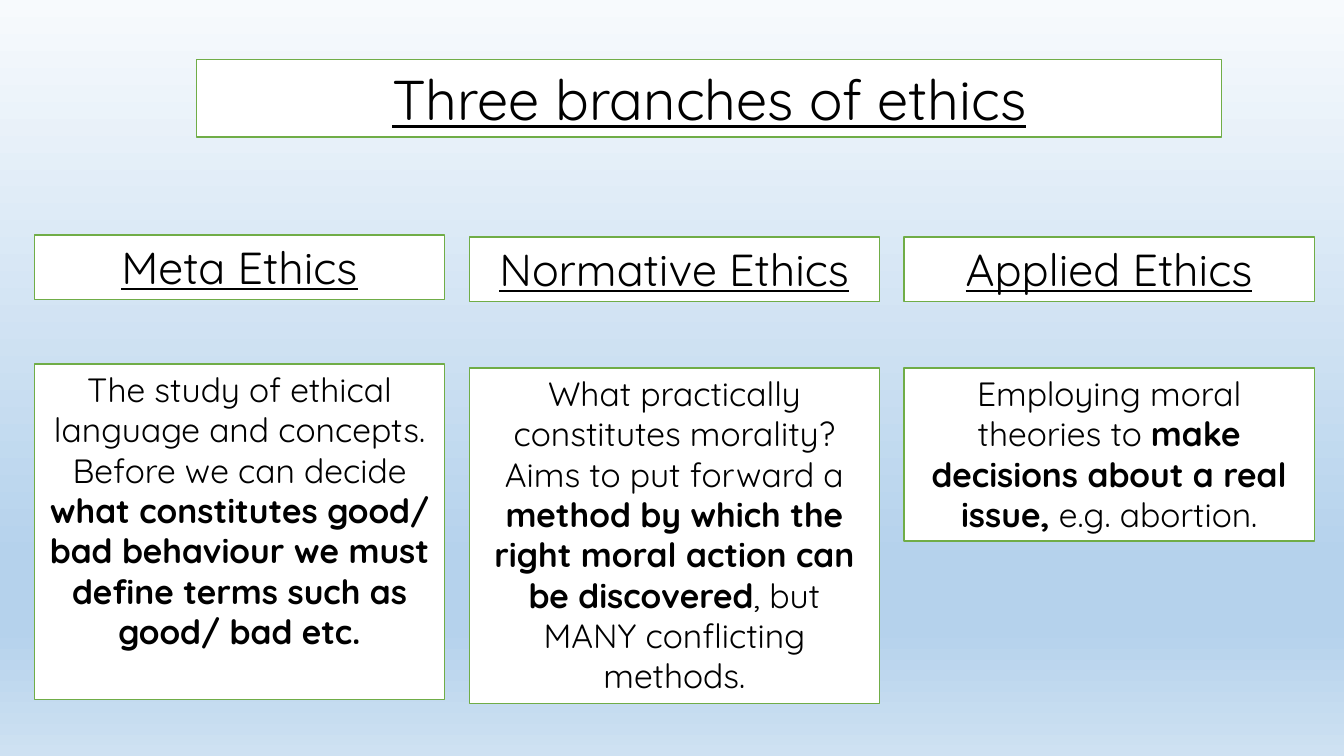
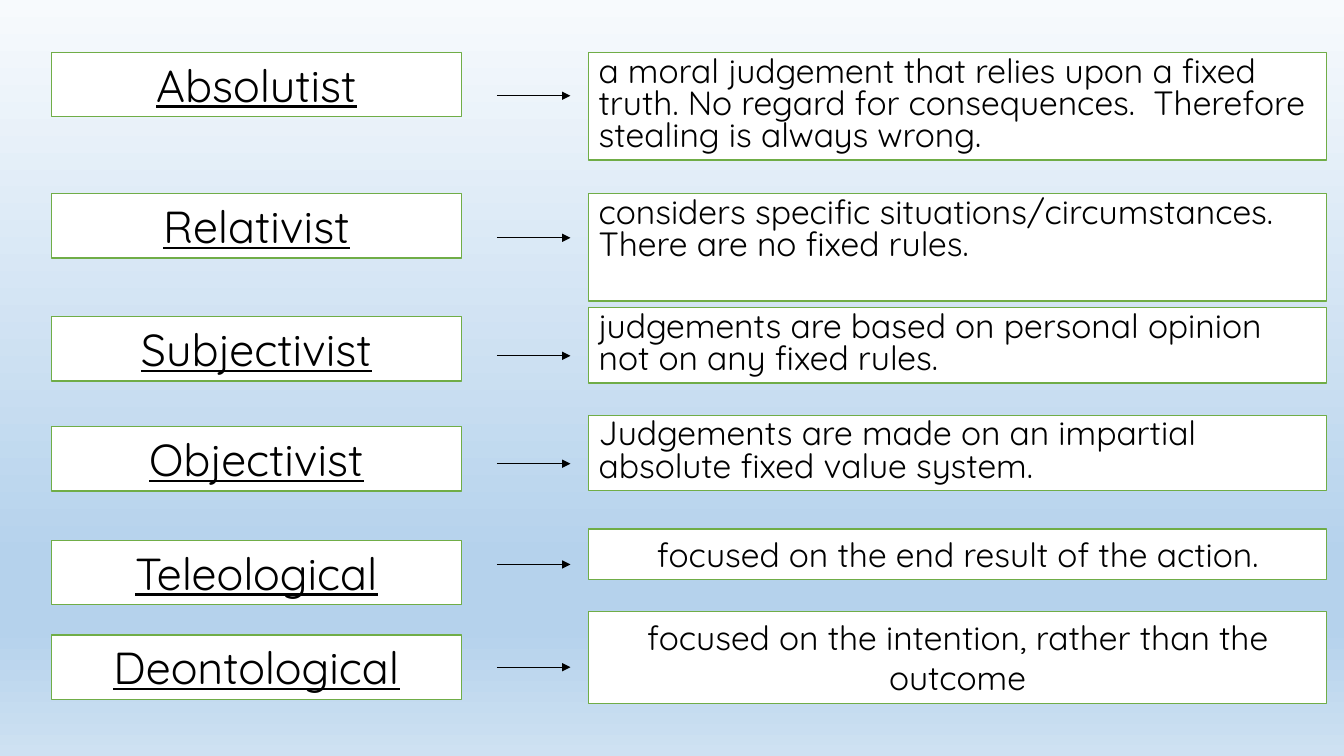
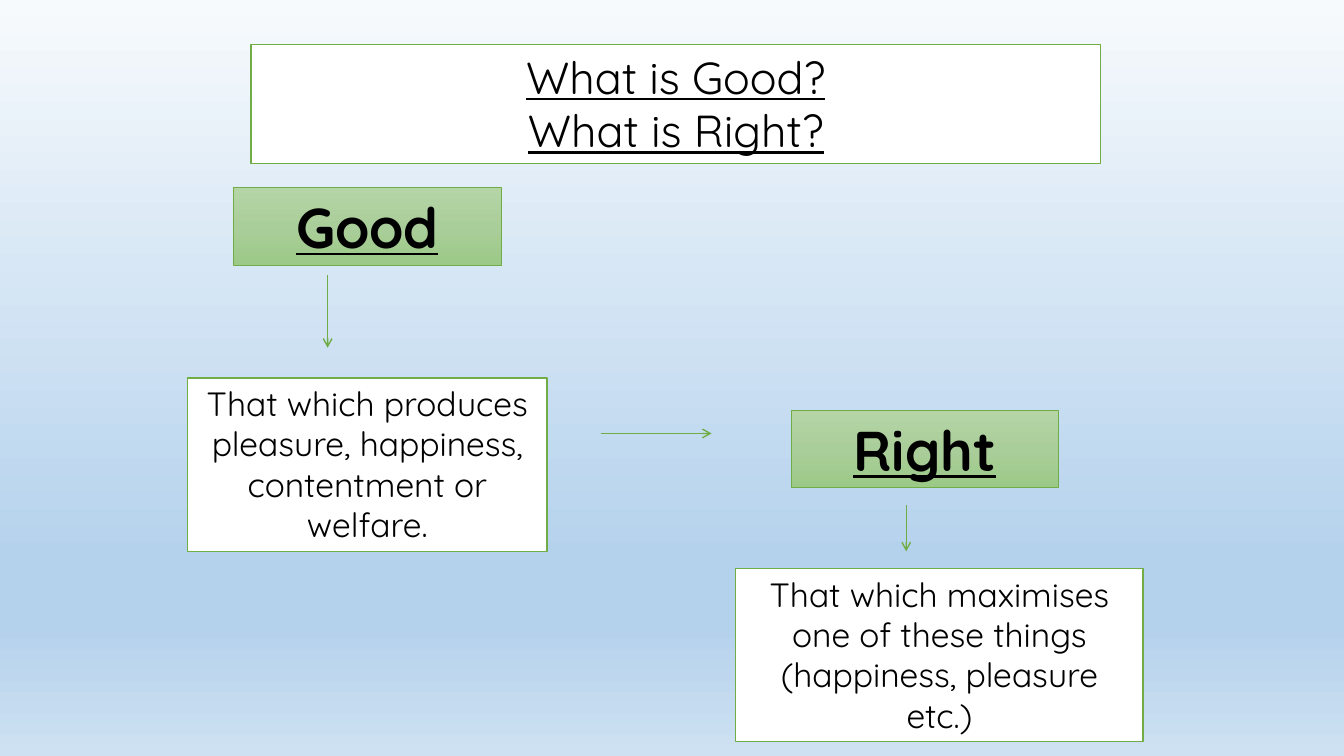
from lxml.etree import SubElement
from pptx import Presentation
from pptx.dml.color import RGBColor
from pptx.enum.shapes import MSO_CONNECTOR, MSO_SHAPE
from pptx.enum.text import MSO_ANCHOR, MSO_AUTO_SIZE, PP_ALIGN
from pptx.oxml.ns import qn
from pptx.util import Pt

FONT = "Quicksand"
COLORS = {"text": "000000", "box": "FFFFFF", "green": "70AD47"}
SKY = [(0, "F7FAFD"), (74, "B5D2EC"), (83, "B5D2EC"), (100, "CEE1F2")]
LEAF = [(0, "B5D5A7"), (50, "AACE9A"), (100, "9CC987")]

HEADING = {"size": 32, "underline": True}
BIG_HEADING = {"size": 40, "underline": True}

BRANCHES = [
    ("Meta Ethics", 167.8, 260, 239.8, [
        ("The study of ethical language and concepts. Before we can decide ", False),
        ("what constitutes good/ bad behaviour we must define terms such as good/ bad etc.", True),
    ]),
    ("Normative Ethics", 169.2, 262.8, 239.8, [
        ("What practically constitutes morality? Aims to put forward a ", False),
        ("method by which the right moral action can be discovered", True),
        (", but MANY conflicting methods.", False),
    ]),
    ("Applied Ethics", 169.2, 262.8, 123.8, [
        ("Employing moral theories to ", False),
        ("make decisions about a real issue,", True),
        (" e.g. abortion.", False),
    ]),
]

LEFT_TIGHT = {"align": PP_ALIGN.LEFT, "spacing": 0.8}
CENTERED = {}
TERMS = [
    ("Absolutist", 37.4, 68.4, 37.4, 77, LEFT_TIGHT,
     "a moral judgement that relies upon a fixed truth. No regard for consequences.  Therefore stealing is always wrong."),
    ("Relativist", 138.2, 169.9, 138.2, 77, LEFT_TIGHT,
     "considers specific situations/circumstances. There are no fixed rules."),
    ("Subjectivist", 226.1, 254.2, 219.6, 54, LEFT_TIGHT,
     "judgements are based on personal opinion not on any fixed rules."),
    ("Objectivist", 304.6, 331.2, 296.6, 54, LEFT_TIGHT,
     "Judgements are made on an impartial absolute fixed value system."),
    ("Teleological", 385.9, 403.2, 378, 36, CENTERED,
     "focused on the end result of the action."),
    ("Deontological", 453.6, 476.6, 437, 65.5, CENTERED,
     "focused on the intention, rather than the outcome"),
]

LABELS = [("Good", 167, 133.9), ("Right", 565.2, 293)]
MEANINGS = [
    ("That which produces pleasure, happiness, contentment or welfare.", (133.9, 270, 257, 123.8)),
    ("That which maximises one of these things (happiness, pleasure etc.)", (525.6, 406.1, 290.9, 123.8)),
]
FLOW = [(234, 196.6, 234, 248.4), (429.1, 309.6, 508.3, 309.6), (647.3, 360.7, 647.3, 393.8)]

COLUMN_LEFT, COLUMN_STEP, COLUMN_WIDTH, HEADING_HEIGHT = 24.6, 310.6, 293, 46


def color(name):
    return RGBColor.from_string(COLORS[name])


def fill_gradient(fill, element, stops):
    fill.gradient()
    fill.gradient_angle = 270
    stop_list = next(element.iter(qn("a:gsLst")))
    for stop in list(stop_list):
        stop_list.remove(stop)
    for position, value in stops:
        stop = SubElement(stop_list, qn("a:gs"), pos=str(position * 1000))
        SubElement(stop, qn("a:srgbClr"), val=value)


def write_text(shape, paragraphs, size=24, bold=False, underline=False,
               align=PP_ALIGN.CENTER, spacing=1.0):
    frame = shape.text_frame
    frame.word_wrap = True
    frame.auto_size = MSO_AUTO_SIZE.NONE
    frame.vertical_anchor = MSO_ANCHOR.TOP
    for index, runs in enumerate(paragraphs):
        paragraph = frame.add_paragraph() if index else frame.paragraphs[0]
        paragraph.alignment = align
        paragraph.line_spacing = spacing
        for text, strong in runs:
            run = paragraph.add_run()
            run.text = text
            run.font.name = FONT
            run.font.size = Pt(size)
            run.font.bold = bold or strong
            run.font.underline = underline
            run.font.color.rgb = color("text")


def style_box(shape, line_width=1, gradient=None):
    if gradient:
        fill_gradient(shape.fill, shape.element, gradient)
    else:
        shape.fill.solid()
        shape.fill.fore_color.rgb = color("box")
    shape.line.color.rgb = color("green")
    shape.line.width = Pt(line_width)


def add_box(slide, place, runs, line_width=1, gradient=None, **text_format):
    shape = slide.shapes.add_shape(MSO_SHAPE.RECTANGLE, *map(Pt, place))
    shape.shadow.inherit = False
    style_box(shape, line_width, gradient)
    write_text(shape, [runs], **text_format)


def set_title(slide, place, lines, **text_format):
    title = slide.shapes.title
    title.left, title.top, title.width, title.height = map(Pt, place)
    style_box(title)
    write_text(title, [[(line, False)] for line in lines], **text_format)


def add_arrow(slide, points, line_color, width, head):
    arrow = slide.shapes.add_connector(MSO_CONNECTOR.STRAIGHT, *map(Pt, points))
    arrow.line.color.rgb = color(line_color)
    arrow.line.width = Pt(width)
    SubElement(arrow.line._get_or_add_ln(), qn("a:tailEnd"), type=head)
    SubElement(arrow.element.spPr, qn("a:effectLst"))


def build_branches(slide):
    set_title(slide, (140.4, 42.5, 732.2, 55.4), ["Three branches of ethics"], **BIG_HEADING)
    for index, (name, name_top, body_top, body_height, runs) in enumerate(BRANCHES):
        left = COLUMN_LEFT + index * COLUMN_STEP
        add_box(slide, (left, name_top, COLUMN_WIDTH, HEADING_HEIGHT), [(name, False)], **HEADING)
        add_box(slide, (left, body_top, COLUMN_WIDTH, body_height), runs)


def build_terms(slide):
    for term, term_top, arrow_y, top, height, text_format, definition in TERMS:
        add_box(slide, (36.7, term_top, COLUMN_WIDTH, HEADING_HEIGHT), [(term, False)], **HEADING)
        add_box(slide, (420.5, top, 527, height), [(definition, False)], **text_format)
        add_arrow(slide, (355, arrow_y, 407.5, arrow_y), "text", 0.5, "triangle")


def build_good_and_right(slide):
    set_title(slide, (179.3, 31.7, 607, 85), ["What is Good?", "What is Right?"], **HEADING)
    for label, left, top in LABELS:
        add_box(slide, (left, top, 190.8, 55.4), [(label, True)], line_width=0.5,
                gradient=LEAF, **BIG_HEADING)
    for meaning, place in MEANINGS:
        add_box(slide, place, [(meaning, False)])
    for points in FLOW:
        add_arrow(slide, points, "green", 1, "arrow")


def main():
    presentation = Presentation()
    presentation.slide_width, presentation.slide_height = Pt(960), Pt(540)
    master = presentation.slide_master
    fill_gradient(master.background.fill, master.element, SKY)
    title_only, blank = presentation.slide_layouts[5], presentation.slide_layouts[6]
    for layout, build in [(title_only, build_branches), (blank, build_terms),
                          (title_only, build_good_and_right)]:
        build(presentation.slides.add_slide(layout))
    presentation.save("out.pptx")


if __name__ == "__main__":
    main()
